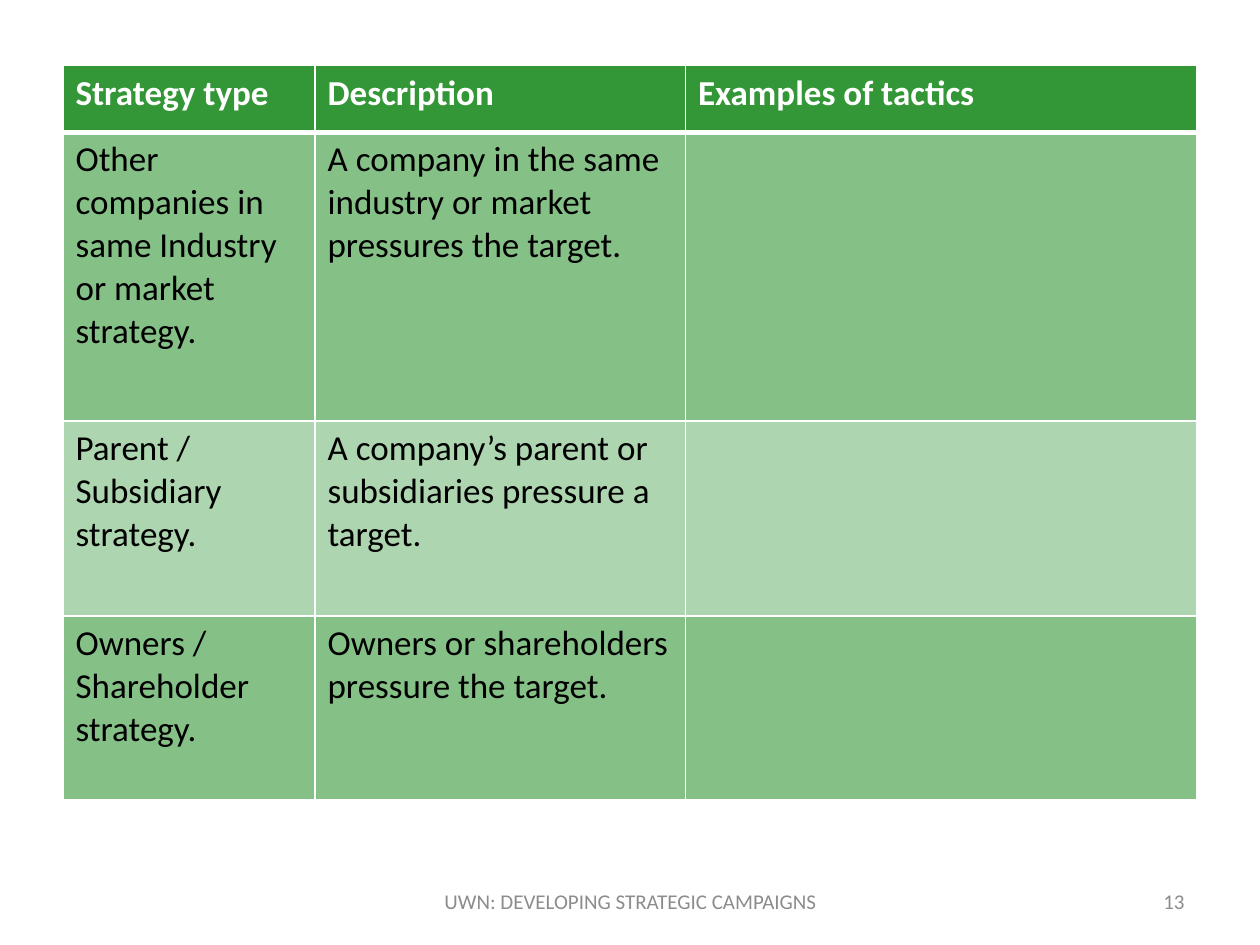
import pptx
import pptx.util
import pptx.dml.color
import pptx.enum.text
import pptx.oxml
import pptx.oxml.ns
import lxml.etree

Inches, Pt = pptx.util.Inches, pptx.util.Pt
RGB = pptx.dml.color.RGBColor.from_string
ALIGN = pptx.enum.text.PP_ALIGN
qn = pptx.oxml.ns.qn

THEME = {
    "font": "Calibri", "green": "349737", "white": "FFFFFF",
    "black": "000000", "gray": "8C8C8C", "body": 20, "foot": 12,
}
ROWS = [
    ("Strategy type", "Description", "Examples of tactics"),
    ("Other companies in same Industry or market strategy.",
     "A company in the same industry or market pressures the target.", ""),
    ("Parent / Subsidiary strategy.",
     "A company’s parent or subsidiaries pressure a target.", ""),
    ("Owners / Shareholder strategy.",
     "Owners or shareholders pressure the target.", ""),
]
COLS = [2, 2.94, 4.06]
HEIGHTS = [0.53, 2.29, 1.55, 1.46]
ALPHAS = [100, 60, 40, 60]
LEFT, TOP = 0.5, 0.52
FOOT = [
    ("UWN: DEVELOPING STRATEGIC CAMPAIGNS", 3.42, 3.17, ALIGN.CENTER),
    ("13", 7.17, 2.33, ALIGN.RIGHT),
]


def style(font, size, color, bold=False):
    look = {"name": THEME["font"], "size": Pt(size), "bold": bold}
    for key, value in look.items():
        setattr(font, key, value)
    font.color.rgb = RGB(THEME[color])


def edge(cell, side, width):
    props = cell._tc.get_or_add_tcPr()
    line = lxml.etree.SubElement(props, qn("a:ln" + side), w=str(Pt(width)))
    fill = lxml.etree.SubElement(line, qn("a:solidFill"))
    lxml.etree.SubElement(fill, qn("a:srgbClr"), val=THEME["white"])


def paint(cell, alpha):
    cell.fill.solid()
    cell.fill.fore_color.rgb = RGB(THEME["green"])
    if alpha < 100:
        color = cell._tc.tcPr.find(qn("a:solidFill"))[0]
        lxml.etree.SubElement(color, qn("a:alpha"), val=str(alpha * 1000))


def grid(slide):
    table = slide.shapes.add_table(
        len(ROWS), len(COLS), Inches(LEFT), Inches(TOP),
        Inches(sum(COLS)), Inches(sum(HEIGHTS))).table
    for col, width in zip(table.columns, COLS):
        col.width = Inches(width)
    for r, texts in enumerate(ROWS):
        table.rows[r].height = Inches(HEIGHTS[r])
        head = r == 0
        edges = {"L": 1, "R": 1, "T": 3 if r == 1 else 1, "B": 3 if head else 1}
        for c, text in enumerate(texts):
            cell = table.cell(r, c)
            for side, width in edges.items():
                edge(cell, side, width)
            paint(cell, ALPHAS[r])
            cell.text = text
            style(cell.text_frame.paragraphs[0].font, THEME["body"],
                  "white" if head else "black", head)


def footer(slide):
    for text, left, width, align in FOOT:
        frame = slide.shapes.add_textbox(
            Inches(left), Inches(6.95), Inches(width), Inches(0.4)).text_frame
        frame.word_wrap = True
        frame.vertical_anchor = pptx.enum.text.MSO_ANCHOR.MIDDLE
        para = frame.paragraphs[0]
        para.text = text
        para.alignment = align
        style(para.font, THEME["foot"], "gray")


def main():
    deck = pptx.Presentation()
    deck.slide_width, deck.slide_height = Inches(10), Inches(7.5)
    slide = deck.slides.add_slide(deck.slide_layouts[6])
    grid(slide)
    footer(slide)
    deck.save("out.pptx")


if __name__ == "__main__":
    main()
